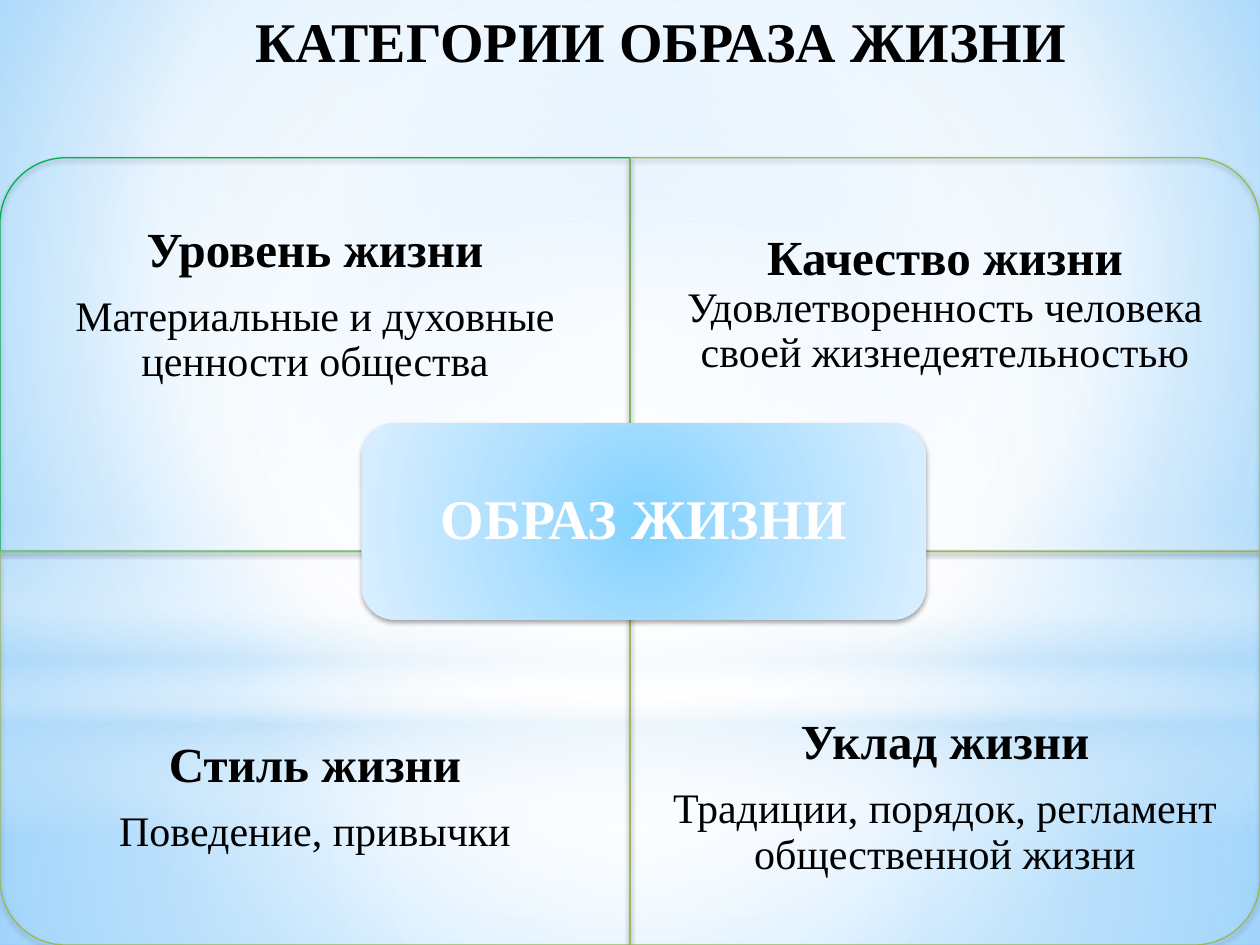
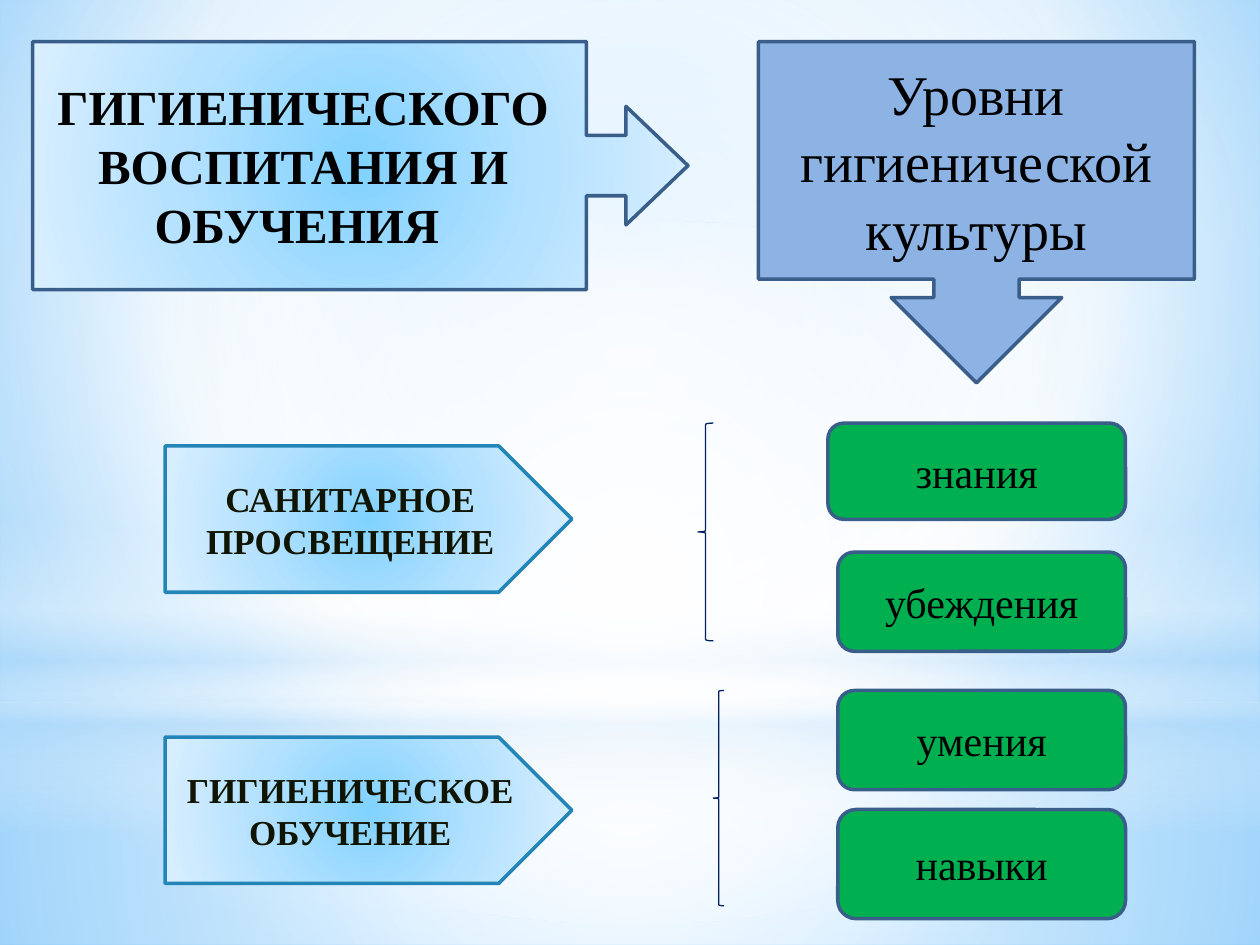
from lxml import etree
from pptx import Presentation, util as u
from pptx.dml.color import RGBColor
from pptx.enum import shapes, text
from pptx.oxml import ns

Cm, Pt = u.Cm, u.Pt
MSO = shapes.MSO_SHAPE
FONT = "Times New Roman"
BLACK = RGBColor(0x00, 0x00, 0x00)
WHITE = RGBColor(0xFF, 0xFF, 0xFF)
INK = RGBColor(0x10, 0x14, 0x03)
GREEN = RGBColor(0x00, 0xB0, 0x50)
OLIVE = RGBColor(0x97, 0xB8, 0x53)
NAVY = RGBColor(0x00, 0x20, 0x60)
STEEL = RGBColor(0x39, 0x5E, 0x89)
PERIWINKLE = RGBColor(0x8C, 0xB3, 0xE3)
TEAL = RGBColor(0x23, 0x84, 0xB8)
HAZE = RGBColor(0xB4, 0xDC, 0xFA)
SKY = RGBColor(0x81, 0xD2, 0xFF)
SKY_MID = RGBColor(0xB3, 0xE1, 0xFF)
SKY_PALE = RGBColor(0xDA, 0xEF, 0xFF)
BG_START = RGBColor(0x9E, 0xD5, 0xFF)
BG_END = RGBColor(0x5B, 0xB9, 0xFF)
CENTRE = (50, 50, 50, 50)
GLOW = ([(0, SKY, 100), (50, SKY_MID, 100), (100, SKY_PALE, 100)], CENTRE)


def paint(parent, stops, focus):
    solid = parent.find(ns.qn("a:solidFill"))
    grad = etree.Element(ns.qn("a:gradFill"), rotWithShape="1")
    gs_list = etree.SubElement(grad, ns.qn("a:gsLst"))
    for pos, color, alpha in stops:
        gs = etree.SubElement(gs_list, ns.qn("a:gs"), pos=str(pos * 1000))
        clr = etree.SubElement(gs, ns.qn("a:srgbClr"), val=str(color))
        etree.SubElement(clr, ns.qn("a:alpha"), val=str(alpha * 1000))
    if focus:
        radial = etree.SubElement(grad, ns.qn("a:path"), path="circle")
        sides = {k: str(v * 1000) for k, v in zip("ltrb", focus)}
        etree.SubElement(radial, ns.qn("a:fillToRect"), sides)
    else:
        etree.SubElement(grad, ns.qn("a:lin"), ang="5400000", scaled="0")
    parent.replace(solid, grad)


def add(s, kind, at, fill=None, line=None, width=2, shadow=None, paras=(),
        inset=(0.25, 0.13), anchor=text.MSO_ANCHOR.MIDDLE, spacing=None):
    box = [Cm(v) for v in at]
    if kind is None:
        sp = s.shapes.add_textbox(*box)
    else:
        sp = s.shapes.add_shape(kind, *box)
        sp.shadow.inherit = False
        if fill is None:
            sp.fill.background()
        else:
            sp.fill.solid()
            if isinstance(fill, RGBColor):
                sp.fill.fore_color.rgb = fill
            else:
                paint(sp._element.spPr, *fill)
        if line is None:
            sp.line.fill.background()
        else:
            sp.line.color.rgb = line
            sp.line.width = Pt(width)
        if shadow:
            effects = sp._element.spPr.find(ns.qn("a:effectLst"))
            outer = etree.SubElement(
                effects, ns.qn("a:outerShdw"), blurRad=str(Pt(3.1)),
                dist=str(Pt(1.7)), dir="5400000", rotWithShape="0")
            clr = etree.SubElement(outer, ns.qn("a:srgbClr"), val=str(BLACK))
            etree.SubElement(clr, ns.qn("a:alpha"), val=str(shadow * 1000))
    tf = sp.text_frame
    tf.word_wrap = True
    tf.vertical_anchor = anchor
    tf.margin_left = tf.margin_right = Cm(inset[0])
    tf.margin_top = tf.margin_bottom = Cm(inset[1])
    for i, runs in enumerate(paras):
        p = tf.add_paragraph() if i else tf.paragraphs[0]
        p.alignment = text.PP_ALIGN.CENTER
        if spacing:
            p.line_spacing = spacing
        if i:
            p.space_before = Pt(9.8)
        for words, size, bold, color in runs:
            r = p.add_run()
            r.text = words
            r.font.name = FONT
            r.font.size = Pt(size)
            r.font.bold = bold
            r.font.color.rgb = color
    return sp


prs = Presentation()
prs.slide_width = Cm(25.4)
prs.slide_height = Cm(19.05)
master = prs.slide_master
master.background.fill.solid()
paint(master._element.cSld.bg.bgPr,
      [(0, BG_START, 100), (60, WHITE, 100), (100, BG_END, 100)],
      (20, 10, 20, 60))

s = prs.slides.add_slide(prs.slide_layouts[6])
bands = [
    (MSO.RECTANGLE, 14.17, 4.88,
     [(0, WHITE, 91), (37, WHITE, 76), (100, HAZE, 79)], CENTRE),
    (MSO.RECTANGLE, 0, 14.17,
     [(0, WHITE, 89), (48, WHITE, 62), (100, HAZE, 79)], CENTRE),
    (MSO.RECTANGLE, 10.46, 6.35,
     [(0, WHITE, 0), (29, WHITE, 30), (45, HAZE, 40), (55, WHITE, 26),
      (65, HAZE, 60), (100, WHITE, 0)], None),
    (MSO.OVAL, 4.45, 14.17, [(0, WHITE, 100), (56, WHITE, 0)], CENTRE),
]
for i, (kind, top, height, stops, focus) in enumerate(bands):
    sp = add(s, kind, (0, top, 25.4, height), (stops, focus))
    sp._element.nvSpPr.cNvPr.set("id", str(100 + i))
    master.shapes._spTree.insert(2 + i, sp._element)

W, TOP = 12.7, 3.18
H = (19.05 - TOP) / 2
TEXT_H = 5.94
quadrants = [
    (0, 0, 270, GREEN, [[("Уровень жизни", 28, True, BLACK)],
                        [("Материальные и духовные ценности общества", 24, False, BLACK)]]),
    (1, 0, 0, OLIVE, [[("Качество жизни ", 28, True, BLACK),
                       ("Удовлетворенность человека своей жизнедеятельностью", 24, False, BLACK)]]),
    (0, 1, 180, OLIVE, [[("Стиль жизни", 28, True, BLACK)],
                        [("Поведение, привычки", 24, False, BLACK)]]),
    (1, 1, 90, OLIVE, [[("Уклад жизни", 28, True, BLACK)],
                       [("Традиции, порядок, регламент общественной жизни", 24, False, BLACK)]]),
]
for col, row, turn, line, paras in quadrants:
    x, y = col * W, TOP + row * H
    w, h = (H, W) if turn in (90, 270) else (W, H)
    sp = add(s, MSO.ROUND_1_RECTANGLE,
             (x + (W - w) / 2, y + (H - h) / 2, w, h),
             line=line, width=0.75, shadow=38)
    sp.rotation = turn
    add(s, None, (x, y + row * (H - TEXT_H), W, TEXT_H), paras=paras,
        inset=(0.56, 0.56), spacing=0.9)

add(s, MSO.ROUNDED_RECTANGLE, (7.29, 8.53, 11.38, 3.96), GLOW, shadow=35,
    paras=[[("ОБРАЗ ЖИЗНИ", 32, True, WHITE)]], inset=(0.33, 0.33), spacing=0.9)
title = add(s, None, (0, 0, 25.4, 3), anchor=text.MSO_ANCHOR.TOP,
            paras=[[("КАТЕГОРИИ ОБРАЗА ЖИЗНИ", 32, True, BLACK)]])
pPr = title.text_frame.paragraphs[0]._p.get_or_add_pPr()
pPr.set("marL", "0")
pPr.set("indent", str(Cm(1.24)))

s = prs.slides.add_slide(prs.slide_layouts[6])
sp = add(s, MSO.RIGHT_ARROW_CALLOUT, (0.66, 0.84, 13.21, 5), GLOW, STEEL)
for i, value in enumerate((0.243, 0.239, 0.25, 0.845)):
    sp.adjustments[i] = value
add(s, None, (0.71, 1.42, 10.8, 3.84), anchor=text.MSO_ANCHOR.TOP,
    paras=[[("ГИГИЕНИЧЕСКОГО ВОСПИТАНИЯ И ОБУЧЕНИЯ ", 28, True, BLACK)]])
sp = add(s, MSO.DOWN_ARROW_CALLOUT, (15.29, 0.84, 8.79, 6.88), PERIWINKLE, STEEL,
         paras=[[("Уровни гигиенической культуры", 32, False, BLACK)]])
sp.adjustments[3] = 0.696

for words, x, y, h in [("знания", 16.69, 8.53, 1.94), ("убеждения", 16.89, 11.13, 2),
                       ("умения", 16.89, 13.92, 2), ("навыки", 16.89, 16.32, 2.2)]:
    add(s, MSO.ROUNDED_RECTANGLE, (x, y, 22.69 - x, h), GREEN, STEEL,
        paras=[[(words, 24, False, BLACK)]])

for words, y in [("САНИТАРНОЕ ПРОСВЕЩЕНИЕ", 8.99), ("ГИГИЕНИЧЕСКОЕ ОБУЧЕНИЕ", 14.86)]:
    add(s, MSO.PENTAGON, (3.33, y, 8.2, 2.95), GLOW, TEAL,
        paras=[[(words, 20, True, INK)]])

for brace in [(14.07, 8.53, 0.31, 4.39), (14.38, 13.92, 0.22, 4.34)]:
    add(s, MSO.LEFT_BRACE, brace, line=NAVY, width=0.75)

prs.save("out.pptx")
